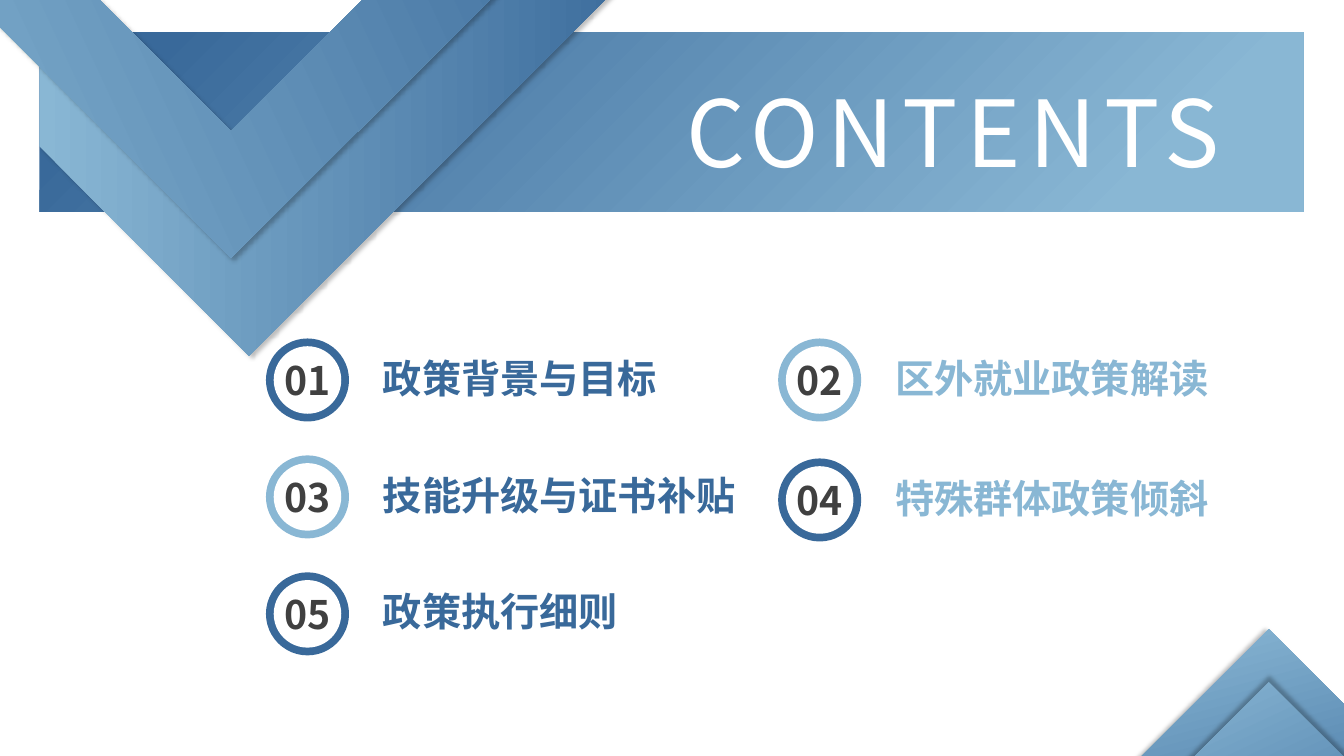
"""Build a contents slide with a chevron banner and five numbered topics."""
from dataclasses import dataclass

from lxml.etree import SubElement
from pptx import Presentation
from pptx.dml.color import RGBColor
from pptx.enum.shapes import MSO_SHAPE as Shape
from pptx.enum.text import MSO_ANCHOR as Anchor, MSO_AUTO_SIZE as AutoSize, PP_ALIGN as Align
from pptx.oxml.ns import qn
from pptx.util import Inches, Pt


@dataclass(frozen=True)
class Theme:
    """Colours, fonts and type sizes."""
    navy: str = "39699A"
    sky: str = "89B7D4"
    white: str = "FFFFFF"
    dark: str = "404040"
    black: str = "000000"
    title_font: str = "Noto Sans CJK JP"
    body_font: str = "Noto Sans CJK SC"
    title_size: int = 66
    body_size: int = 28
    ring_width: int = 6


@dataclass(frozen=True)
class Topic:
    """One numbered entry and its place in the grid."""
    label: str
    column: int
    row: int
    ring: str
    width: float = 3.64


THEME = Theme()
TOPICS = [
    Topic("政策背景与目标", 0, 0, THEME.navy),
    Topic("区外就业政策解读", 1, 0, THEME.sky),
    Topic("技能升级与证书补贴", 0, 1, THEME.sky, 3.92),
    Topic("特殊群体政策倾斜", 1, 1, THEME.navy),
    Topic("政策执行细则", 0, 2, THEME.navy),
]
COLUMN_LEFTS = (2.68, 7.76)
ROW_PITCHES = (1.16, 1.19)
COLUMN_COLORS = (THEME.navy, THEME.sky)
FIRST_TOP = 3.4
RING_SIZE = 0.74
DISC_SIZE = 0.67
OUTER_CHEVRON = [(2.47, 3.53), (6.53, -0.53), (5.9, -1.16), (2.47, 2.26), (0.39, 0.18), (0.39, 1.45)]
INNER_CHEVRON = [(2.29, 2.56), (6.35, -1.49), (5.72, -2.12), (2.29, 1.3), (-1.13, -2.12), (-1.76, -1.49)]


def paint_gradient(shape, stops, angle):
    """Fill a shape with a two-stop gradient turned clockwise by angle."""
    shape.fill.gradient()
    shape.fill.gradient_angle = -angle % 360
    for stop, (position, color) in zip(shape.fill.gradient_stops, stops):
        stop.position = position
        stop.color.rgb = RGBColor.from_string(color)
    shape.line.fill.background()
    shape.shadow.inherit = False


def cast_shadow(shape, distance, direction):
    """Give a shape a soft outer shadow."""
    effects = shape._element.spPr.find(qn("a:effectLst"))
    shadow = SubElement(effects, qn("a:outerShdw"), blurRad=str(Pt(3)), dist=str(Pt(distance)),
                        dir=str(direction * 60000), algn="ctr", rotWithShape="0")
    color = SubElement(shadow, qn("a:srgbClr"), val=THEME.black)
    SubElement(color, qn("a:alpha"), val="25000")


def add_banner(slide):
    """Add the wide gradient band behind the title."""
    banner = slide.shapes.add_shape(Shape.RECTANGLE, Inches(0.39), Inches(0.32), Inches(12.54), Inches(1.78))
    paint_gradient(banner, [(0.09, THEME.navy), (0.87, THEME.sky)], 45)


def add_chevron(slide, points, angle):
    """Add a V-shaped ribbon through the given points."""
    corners = [(Inches(x), Inches(y)) for x, y in points]
    builder = slide.shapes.build_freeform(*corners[0], scale=1.0)
    builder.add_line_segments(corners[1:], close=True)
    chevron = builder.convert_to_shape()
    paint_gradient(chevron, [(0, THEME.sky), (1, THEME.navy)], angle)
    cast_shadow(chevron, 3, 45)


def add_diamond(slide, top, angle, distance, direction):
    """Add a square standing on its corner at the lower right."""
    diamond = slide.shapes.add_shape(Shape.RECTANGLE, Inches(11.67), Inches(top), Inches(1.83), Inches(1.83))
    diamond.rotation = 45
    paint_gradient(diamond, [(0, THEME.sky), (1, THEME.navy)], angle)
    cast_shadow(diamond, distance, direction)


def format_run(run, font_name, size, color, bold=False):
    """Set the typeface, size, colour and weight of a run."""
    run.font.name = font_name
    run.font.size = Pt(size)
    run.font.bold = bold
    run.font.color.rgb = RGBColor.from_string(color)
    SubElement(run.font._element, qn("a:ea"), typeface=font_name)


def add_title(slide, text):
    """Place the title placeholder over the banner."""
    title = slide.shapes.title
    title.left, title.top, title.width, title.height = Inches(5.83), Inches(0.69), Inches(7.25), Inches(1.21)
    slide.shapes._spTree.append(title._element)
    frame = title.text_frame
    frame.text = text
    frame.auto_size = AutoSize.NONE
    frame.vertical_anchor = Anchor.MIDDLE
    paragraph = frame.paragraphs[0]
    paragraph.alignment = Align.CENTER
    run = paragraph.runs[0]
    format_run(run, THEME.title_font, THEME.title_size, THEME.white)
    run.font._element.set("spc", "600")


def add_text(slide, text, left, top, width, height, color, alignment, anchor):
    """Add a bold line of body text."""
    box = slide.shapes.add_textbox(Inches(left), Inches(top), Inches(width), Inches(height))
    frame = box.text_frame
    frame.text = text
    frame.word_wrap = True
    frame.vertical_anchor = anchor
    paragraph = frame.paragraphs[0]
    paragraph.alignment = alignment
    format_run(paragraph.runs[0], THEME.body_font, THEME.body_size, color, bold=True)


def add_circle(shapes, left, top, size, color):
    """Add a plain filled circle."""
    circle = shapes.add_shape(Shape.OVAL, Inches(left), Inches(top), Inches(size), Inches(size))
    circle.fill.solid()
    circle.fill.fore_color.rgb = RGBColor.from_string(color)
    circle.line.fill.background()
    circle.shadow.inherit = False
    return circle


def add_badge(slide, left, top, ring_color):
    """Add a coloured ring with a white disc inside."""
    group = slide.shapes.add_group_shape()
    ring = add_circle(group.shapes, left, top, RING_SIZE, THEME.navy)
    SubElement(ring.fill.fore_color._xFill.find(qn("a:srgbClr")), qn("a:alpha"), val="39000")
    ring.line.color.rgb = RGBColor.from_string(ring_color)
    ring.line.width = Pt(THEME.ring_width)
    inset = (RING_SIZE - DISC_SIZE) / 2
    add_circle(group.shapes, left + inset, top + inset, DISC_SIZE, THEME.white)


def add_topic(slide, number, topic):
    """Add a topic label with its numbered badge."""
    left = COLUMN_LEFTS[topic.column]
    top = FIRST_TOP + topic.row * ROW_PITCHES[topic.column]
    add_text(slide, topic.label, left + 1.02, top + 0.11, topic.width, 0.47,
             COLUMN_COLORS[topic.column], Align.LEFT, Anchor.MIDDLE)
    add_badge(slide, left, top, topic.ring)
    add_text(slide, f"{number:02d}", left - 0.11, top + 0.09, 0.96, 0.5,
             THEME.dark, Align.CENTER, Anchor.TOP)


def main():
    """Build and save the presentation."""
    presentation = Presentation()
    presentation.slide_width = Inches(13.33)
    presentation.slide_height = Inches(7.5)
    slide = presentation.slides.add_slide(presentation.slide_layouts[5])
    add_banner(slide)
    add_chevron(slide, OUTER_CHEVRON, 0)
    add_chevron(slide, INNER_CHEVRON, 335)
    add_diamond(slide, 6.62, 30, 3, 180)
    add_diamond(slide, 7.15, 20, 5, 270)
    add_title(slide, "CONTENTS")
    for number, topic in enumerate(TOPICS, start=1):
        add_topic(slide, number, topic)
    presentation.save("out.pptx")


if __name__ == "__main__":
    main()
